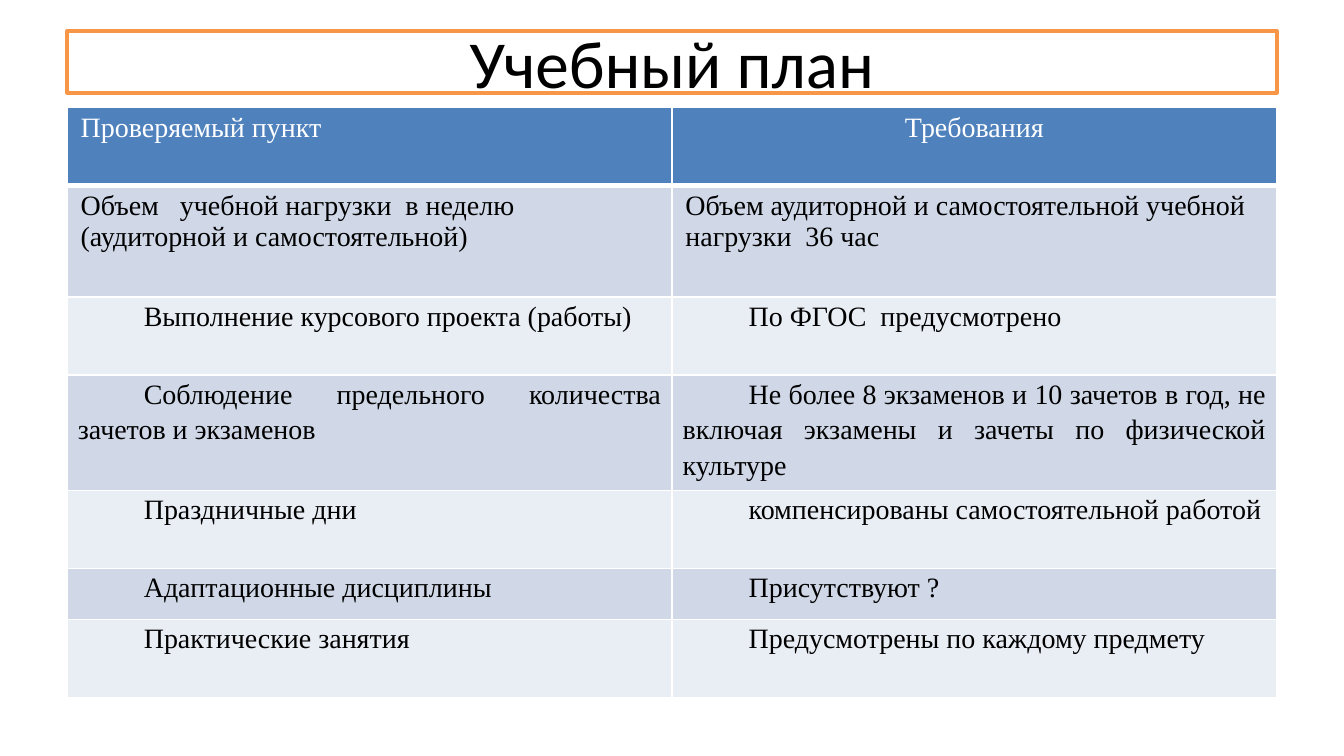
from dataclasses import dataclass

from lxml import etree
from pptx import Presentation
from pptx.dml.color import RGBColor
from pptx.enum import text
from pptx.oxml.ns import qn
from pptx.util import Inches, Pt

WHITE = RGBColor(0xFF, 0xFF, 0xFF)
BLACK = RGBColor(0, 0, 0)
ORANGE = RGBColor(0xF7, 0x96, 0x46)
HEADER_BLUE = RGBColor(0x4F, 0x81, 0xBD)
BANDS = (RGBColor(0xD0, 0xD8, 0xE8), RGBColor(0xE9, 0xED, 0xF4))

LEFT, ALIGN_CENTER, JUSTIFY = (
    text.PP_ALIGN.LEFT, text.PP_ALIGN.CENTER, text.PP_ALIGN.JUSTIFY)


@dataclass
class Row:
    item: str
    requirement: str
    height: float
    indented: bool = True


ROWS = [
    Row("Проверяемый пункт", "Требования", 0.58, False),
    Row("Объем   учебной нагрузки  в неделю (аудиторной и самостоятельной)",
        "Объем аудиторной и самостоятельной учебной нагрузки  36 час", 0.83, False),
    Row("Выполнение курсового проекта (работы)", "По ФГОС  предусмотрено", 0.58),
    Row("Соблюдение предельного количества зачетов и экзаменов",
        "Не более 8 экзаменов и 10 зачетов в год, не включая экзамены и зачеты "
        "по физической культуре", 0.86),
    Row("Праздничные дни", "компенсированы самостоятельной работой", 0.58),
    Row("Адаптационные дисциплины", "Присутствуют ?", 0.38),
    Row("Практические занятия", "Предусмотрены по каждому предмету", 0.58),
]


def add_title(slide, title: str) -> None:
    shape = slide.shapes.title
    shape.left, shape.top = Inches(0.5), Inches(0.23)
    shape.width, shape.height = Inches(9), Inches(0.46)
    shape.fill.solid()
    shape.fill.fore_color.rgb = WHITE
    shape.line.color.rgb = ORANGE
    shape.line.width = Pt(2)
    frame = shape.text_frame
    frame.text = title
    frame.auto_size = text.MSO_AUTO_SIZE.NONE
    frame.vertical_anchor = text.MSO_ANCHOR.MIDDLE
    paragraph = frame.paragraphs[0]
    paragraph.alignment = ALIGN_CENTER
    paragraph.font.name = "Calibri"
    paragraph.font.size = Pt(36)
    paragraph.font.color.rgb = BLACK


def set_borders(cell, top: float, bottom: float) -> None:
    """Draw white borders; top and bottom widths are in points."""
    properties = cell._tc.get_or_add_tcPr()
    widths = {"a:lnL": 1, "a:lnR": 1, "a:lnT": top, "a:lnB": bottom}
    for position, (tag, width) in enumerate(widths.items()):
        line = etree.Element(qn(tag), w=str(Pt(width)))
        fill = etree.SubElement(line, qn("a:solidFill"))
        etree.SubElement(fill, qn("a:srgbClr"), val=str(WHITE))
        properties.insert(position, line)


def fill_cell(cell, words: str, fill: RGBColor, color: RGBColor,
              alignment: text.PP_ALIGN, indented: bool) -> None:
    cell.fill.solid()
    cell.fill.fore_color.rgb = fill
    cell.margin_left = cell.margin_right = Inches(0.08 if indented else 0.1)
    cell.margin_top = cell.margin_bottom = Inches(0 if indented else 0.04)
    cell.text = words
    paragraph = cell.text_frame.paragraphs[0]
    paragraph.alignment = alignment
    paragraph.font.name = "Times New Roman"
    paragraph.font.size = Pt(15)
    paragraph.font.bold = False
    paragraph.font.color.rgb = color
    if indented:
        paragraph.line_spacing = 1.15
        properties = paragraph._p.get_or_add_pPr()
        properties.set("marL", "0")
        properties.set("indent", str(Inches(0.49)))


def add_plan_table(slide, rows: list[Row]) -> None:
    height = sum(row.height for row in rows)
    table = slide.shapes.add_table(
        len(rows), 2, Inches(0.5), Inches(0.8), Inches(9), Inches(height)).table
    for index, row in enumerate(rows):
        table.rows[index].height = Inches(row.height)
        header = index == 0
        fill = HEADER_BLUE if header else BANDS[(index - 1) % 2]
        for column, words in enumerate((row.item, row.requirement)):
            alignment = JUSTIFY if row.indented else LEFT
            if header and column == 1:
                alignment = ALIGN_CENTER
            cell = table.cell(index, column)
            fill_cell(cell, words, fill, WHITE if header else BLACK,
                      alignment, row.indented)
            set_borders(cell, top=3 if index == 1 else 1, bottom=3 if header else 1)


def main() -> None:
    presentation = Presentation()
    presentation.slide_width = Inches(10)
    presentation.slide_height = presentation.slide_width * 9 // 16
    slide = presentation.slides.add_slide(presentation.slide_layouts[5])
    add_title(slide, "Учебный план")
    add_plan_table(slide, ROWS)
    presentation.save("out.pptx")


if __name__ == "__main__":
    main()
